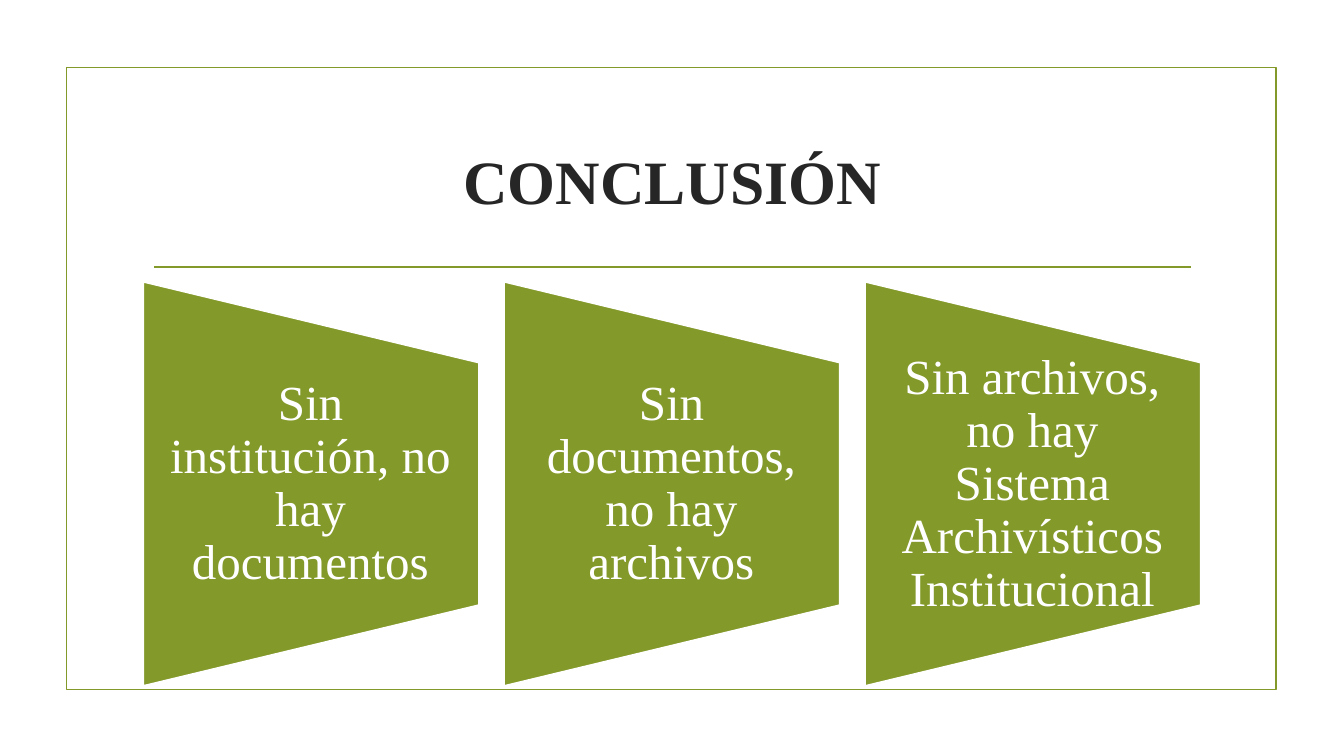
import pptx
import pptx.util
import pptx.dml.color
import pptx.enum.shapes
import pptx.enum.text
import pptx.oxml.ns
import lxml.etree

Inches = pptx.util.Inches
Pt = pptx.util.Pt
RGBColor = pptx.dml.color.RGBColor
SHAPE = pptx.enum.shapes.MSO_SHAPE

GREEN = RGBColor(0x83, 0x99, 0x2A)
WHITE = RGBColor(0xFF, 0xFF, 0xFF)
DARK = RGBColor(0x26, 0x26, 0x26)
FONT = "Times New Roman"

CLAIMS = [
    "Sin institución, no hay documentos",
    "Sin documentos, no hay archivos",
    "Sin archivos, no hay Sistema Archivísticos Institucional",
]
START, STEP = 1.42, 3.58
WIDTH, HEIGHT = 3.33, 4.01
MIDDLE = 4.8


def add_form(slide, kind, left, top, width, height, fill, line):
    form = slide.shapes.add_shape(
        kind, Inches(left), Inches(top), Inches(width), Inches(height))
    form.shadow.inherit = False
    if fill is None:
        form.fill.background()
    else:
        form.fill.solid()
        form.fill.fore_color.rgb = fill
    form.line.color.rgb = line
    form.line.width = Pt(1.25)
    return form


def add_rule(slide, left, right, top):
    rule = slide.shapes.add_connector(
        pptx.enum.shapes.MSO_CONNECTOR.STRAIGHT,
        Inches(left), Inches(top), Inches(right), Inches(top))
    rule.line.color.rgb = GREEN
    rule.line.width = Pt(1.25)
    props = rule.element.find(pptx.oxml.ns.qn("p:spPr"))
    lxml.etree.SubElement(props, pptx.oxml.ns.qn("a:effectLst"))


def add_text(slide, text, left, top, width, height, size, color, bold=False):
    box = slide.shapes.add_textbox(
        Inches(left), Inches(top), Inches(width), Inches(height))
    frame = box.text_frame
    frame.word_wrap = True
    frame.vertical_anchor = pptx.enum.text.MSO_ANCHOR.MIDDLE
    frame.text = text
    line = frame.paragraphs[0]
    line.alignment = pptx.enum.text.PP_ALIGN.CENTER
    font = line.runs[0].font
    font.name = FONT
    font.size = Pt(size)
    font.bold = bold
    font.color.rgb = color
    return frame


def add_claim(slide, text, left):
    wedge = add_form(
        slide, SHAPE.FLOWCHART_MANUAL_OPERATION,
        left + (WIDTH - HEIGHT) / 2, MIDDLE - WIDTH / 2,
        HEIGHT, WIDTH, GREEN, WHITE)
    wedge.rotation = 270
    frame = add_text(
        slide, text, left, MIDDLE - 1.2, WIDTH, 2.41, 35, WHITE)
    frame.margin_left = Inches(0.24)
    frame.margin_right = Inches(0.25)
    frame.margin_top = frame.margin_bottom = Inches(0)
    frame.paragraphs[0].line_spacing = 0.9


def main():
    deck = pptx.Presentation()
    deck.slide_width = Inches(13.33)
    deck.slide_height = Inches(7.5)
    slide = deck.slides.add_slide(deck.slide_layouts[6])
    add_form(slide, SHAPE.RECTANGLE, 0.66, 0.67, 12, 6.17, None, GREEN)
    add_rule(slide, 1.53, 11.81, 2.65)
    add_text(slide, "CONCLUSIÓN", 1.42, 1.07, 10.5, 1.43, 44, DARK, True)
    for index, claim in enumerate(CLAIMS):
        add_claim(slide, claim, START + index * STEP)
    deck.save("out.pptx")


if __name__ == "__main__":
    main()
